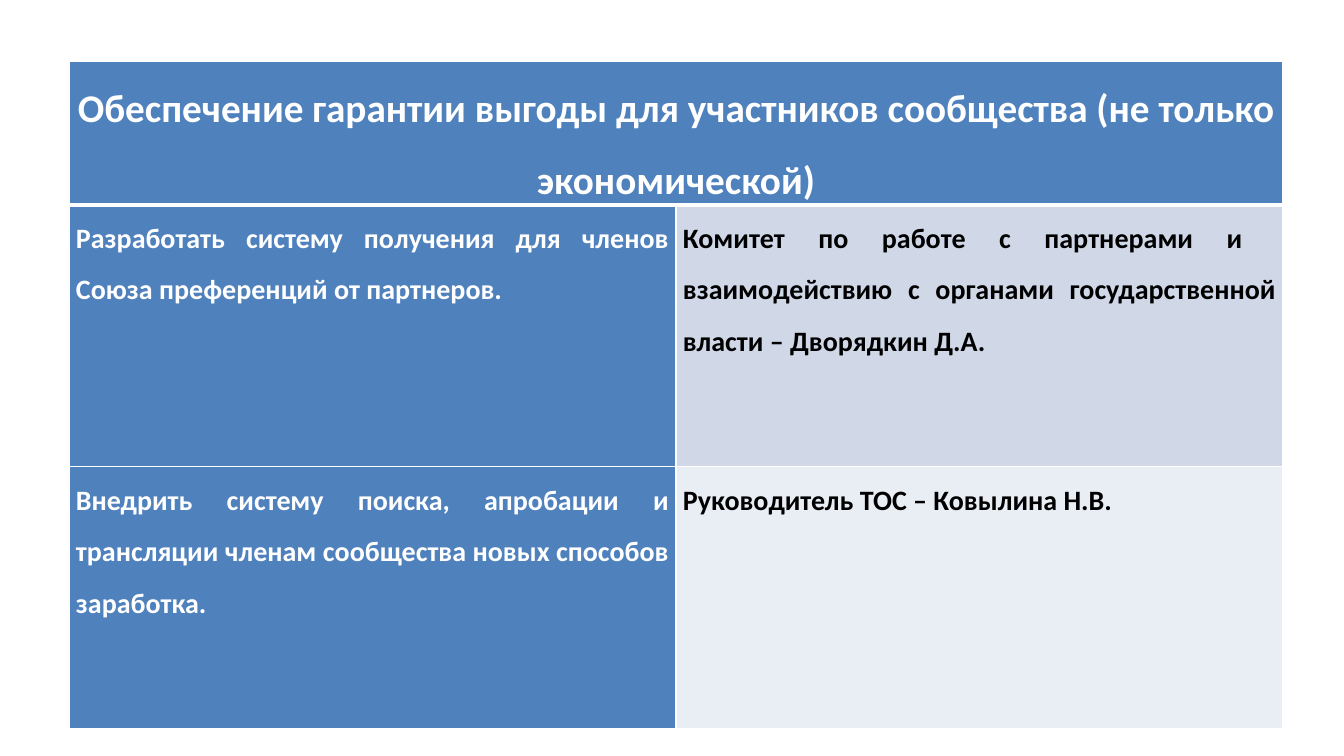
from lxml.etree import SubElement
from pptx import Presentation
from pptx.dml.color import RGBColor
from pptx.enum.text import PP_ALIGN as Align
from pptx.oxml.ns import qn
from pptx.util import Pt

HEADING = "Обеспечение гарантии выгоды для участников сообщества (не только экономической)"
TASKS = [
    ("Разработать систему получения для членов Союза преференций от партнеров.",
     "Комитет по работе с партнерами и  взаимодействию с органами государственной власти – Дворядкин Д.А."),
    ("Внедрить систему поиска, апробации и трансляции членам сообщества новых способов заработка.",
     "Руководитель ТОС – Ковылина Н.В."),
]
BLUE, WHITE, BLACK = "4F81BD", "FFFFFF", "000000"
BANDS = ["D0D8E8", "E9EDF4"]

SLIDE_SIZE = (1344, 756)
LEFT, TOP = 69, 61
COLUMN_WIDTH = 607
ROW_HEIGHTS = [127, 262, 262]
SIDE_MARGIN = 7


def px(length):
    return round(length * 914400 / 100.8)


def color(value):
    return RGBColor.from_string(value)


def add_borders(cell, bottom_width):
    """Draw white lines on all sides; must run before the fill is set."""
    properties = cell._tc.get_or_add_tcPr()
    for side, width in (("L", 1), ("R", 1), ("T", 1), ("B", bottom_width)):
        line = SubElement(properties, qn(f"a:ln{side}"), w=str(Pt(width)))
        fill = SubElement(line, qn("a:solidFill"))
        SubElement(fill, qn("a:srgbClr"), val=WHITE)


def style_cell(cell, fill, bottom_width=1):
    add_borders(cell, bottom_width)
    cell.fill.solid()
    cell.fill.fore_color.rgb = color(fill)
    cell.margin_left = cell.margin_right = px(SIDE_MARGIN)
    cell.margin_top = cell.margin_bottom = 0


def write_cell(cell, text, size, font_color, align):
    para = cell.text_frame.paragraphs[0]
    para.alignment = align
    para.line_spacing = 1.5
    span = para.add_run()
    span.text = text
    span.font.name = "Calibri"
    span.font.size = Pt(size)
    span.font.bold = True
    span.font.color.rgb = color(font_color)


def main():
    deck = Presentation()
    deck.slide_width, deck.slide_height = map(px, SLIDE_SIZE)
    page = deck.slides.add_slide(deck.slide_layouts[6])

    table = page.shapes.add_table(
        len(ROW_HEIGHTS), 2, px(LEFT), px(TOP),
        px(2 * COLUMN_WIDTH), px(sum(ROW_HEIGHTS))).table
    for column in table.columns:
        column.width = px(COLUMN_WIDTH)
    for row, height in zip(table.rows, ROW_HEIGHTS):
        row.height = px(height)

    heading = table.cell(0, 0)
    heading.merge(table.cell(0, 1))
    for cell in table.rows[0].cells:
        style_cell(cell, BLUE, bottom_width=3)
    write_cell(heading, HEADING, 28, WHITE, Align.CENTER)

    for row, (texts, band) in enumerate(zip(TASKS, BANDS), start=1):
        looks = [(BLUE, WHITE), (band, BLACK)]
        for column, (text, (fill, font_color)) in enumerate(zip(texts, looks)):
            cell = table.cell(row, column)
            style_cell(cell, fill)
            write_cell(cell, text, 20, font_color, Align.JUSTIFY)

    deck.save("out.pptx")


if __name__ == "__main__":
    main()
